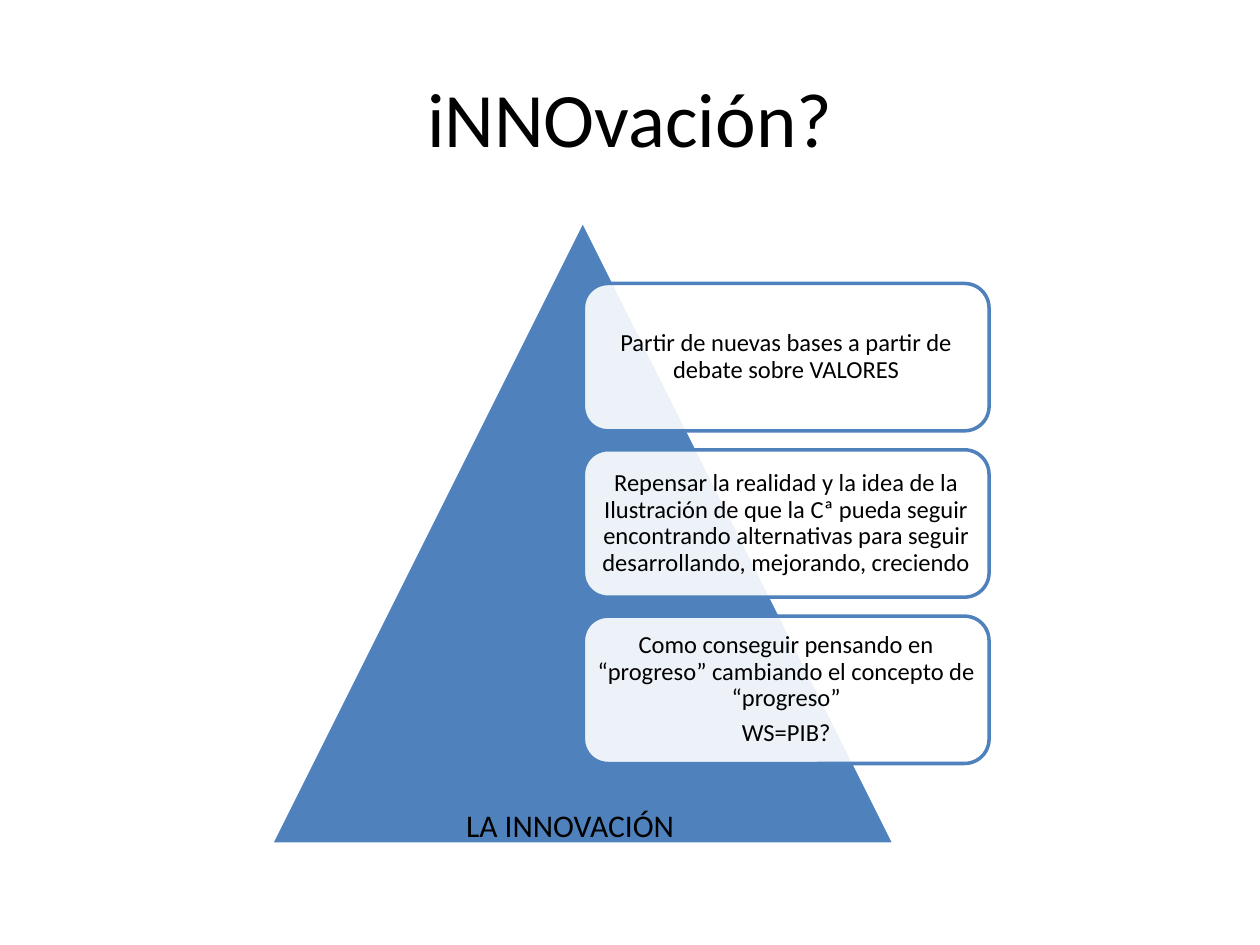
"""Build the iNNOvación slide: a pyramid with three stacked statements."""
import pptx
import pptx.util
import pptx.dml.color
import pptx.enum.shapes
import pptx.enum.text
import pptx.oxml.ns
import lxml.etree

Inches = pptx.util.Inches
Pt = pptx.util.Pt
RGB = pptx.dml.color.RGBColor.from_string
MSO = pptx.enum.shapes.MSO_SHAPE
qn = pptx.oxml.ns.qn

THEME = {
    "font": "Calibri", "blue": RGB("4F81BD"), "white": RGB("FFFFFF"), "text": RGB("000000"),
    "title": Pt(44), "label": Pt(18), "body": Pt(14), "line": Pt(2), "opacity": "90000",
}


def write(s, paragraphs, size, frame=None, spacing=None):
    tf = s.text_frame
    for name, value in {"word_wrap": True, **(frame or {})}.items():
        setattr(tf, name, value)
    for i, text in enumerate(paragraphs):
        p = tf.add_paragraph() if i else tf.paragraphs[0]
        for name, value in {"alignment": pptx.enum.text.PP_ALIGN.CENTER, **(spacing or {})}.items():
            setattr(p, name, value)
        r = p.add_run()
        r.text = text
        for name, value in {"name": THEME["font"], "size": size}.items():
            setattr(r.font, name, value)
        r.font.color.rgb = THEME["text"]


def add_shape(shapes, kind, box, fill, line):
    s = shapes.add_shape(kind, *map(Inches, box))
    s.shadow.inherit = False
    s.fill.solid()
    s.fill.fore_color.rgb = fill
    s.line.color.rgb = line
    s.line.width = THEME["line"]
    return s


prs = pptx.Presentation()
prs.slide_width, prs.slide_height = Inches(10), Inches(7.5)
slide = prs.slides.add_slide(prs.slide_layouts[6])
middle = {"vertical_anchor": pptx.enum.text.MSO_ANCHOR.MIDDLE}

title = slide.shapes.add_textbox(Inches(0.5), Inches(0.3), Inches(9), Inches(1.25))
write(title, ["iNNOvación?"], THEME["title"], middle)

diagram = slide.shapes.add_group_shape()
add_shape(diagram.shapes, MSO.ISOSCELES_TRIANGLE, (2.15, 1.75, 4.95, 4.95), THEME["blue"], THEME["white"])

statements = [
    ["Partir de nuevas bases a partir de debate sobre VALORES"],
    ["Repensar la realidad y la idea de la Ilustración de que la Cª pueda seguir "
     "encontrando alternativas para seguir desarrollando, mejorando, creciendo"],
    ["Como conseguir pensando en “progreso” cambiando el concepto de “progreso”", "WS=PIB?"],
]
margins = {f"margin_{side}": 0 for side in ("left", "top", "right", "bottom")}
for i, paragraphs in enumerate(statements):
    card = add_shape(diagram.shapes, MSO.ROUNDED_RECTANGLE, (4.63, 2.25 + i * 1.32, 3.22, 1.17),
                     THEME["white"], THEME["blue"])
    color = card.element.spPr.find(qn("a:solidFill")).find(qn("a:srgbClr"))
    lxml.etree.SubElement(color, qn("a:alpha")).set("val", THEME["opacity"])
    write(card, paragraphs, THEME["body"], {**middle, **margins},
          {"line_spacing": 0.9, "space_after": Pt(5)})

label = slide.shapes.add_textbox(Inches(2.87), Inches(6.35), Inches(3.31), Inches(0.4))
write(label, ["LA INNOVACIÓN"], THEME["label"],
      {"auto_size": pptx.enum.text.MSO_AUTO_SIZE.SHAPE_TO_FIT_TEXT})

prs.save("out.pptx")
